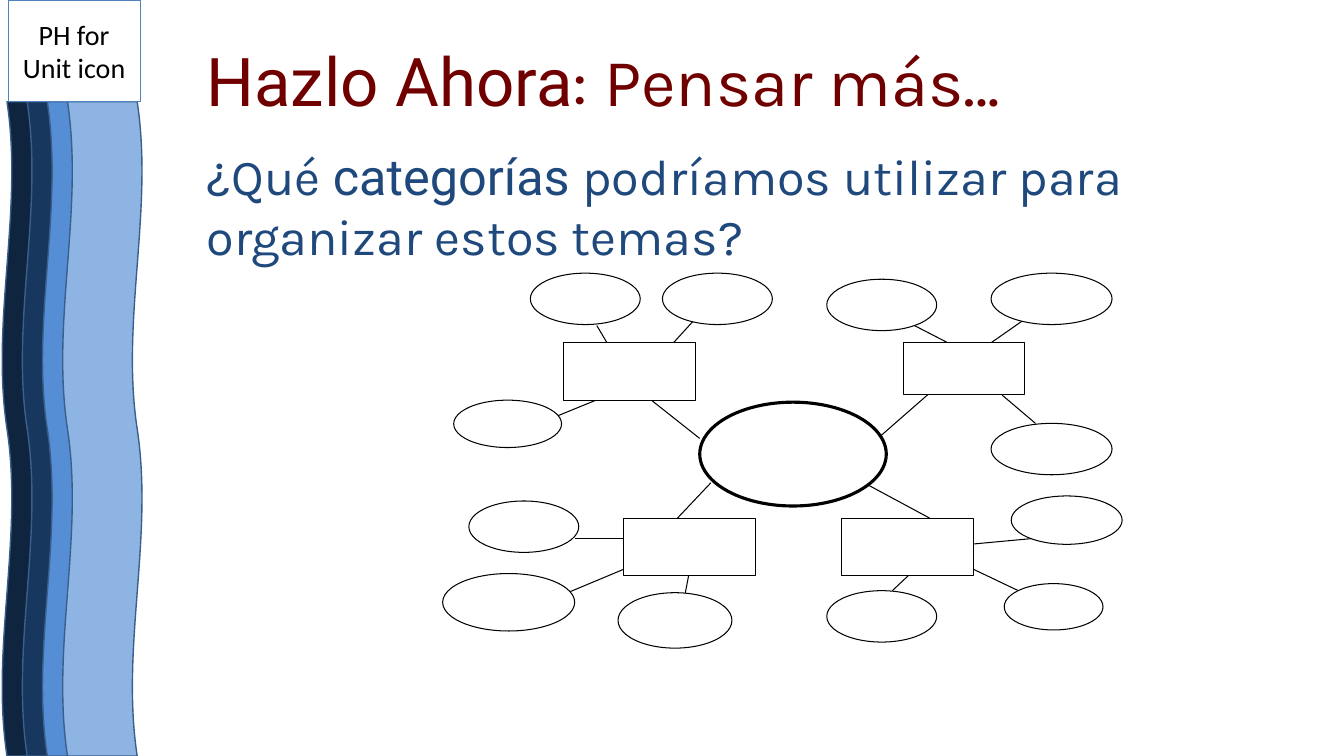
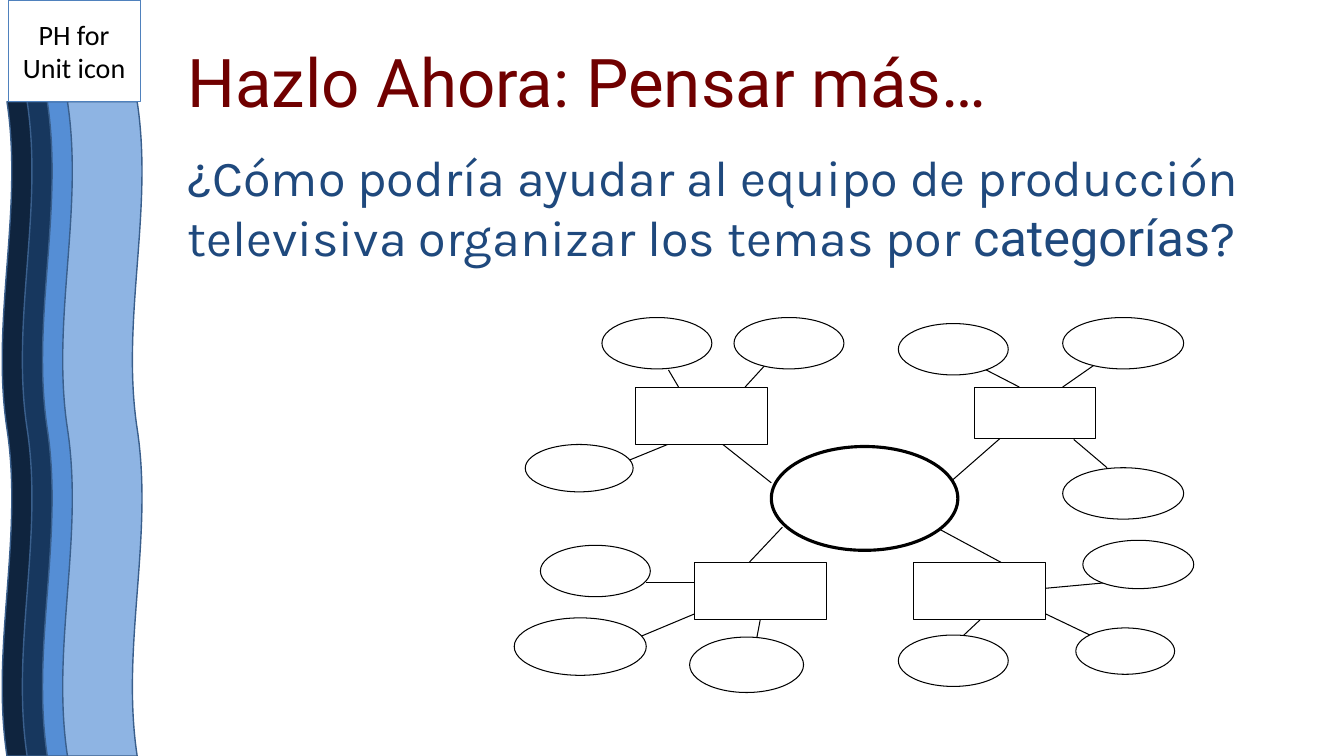
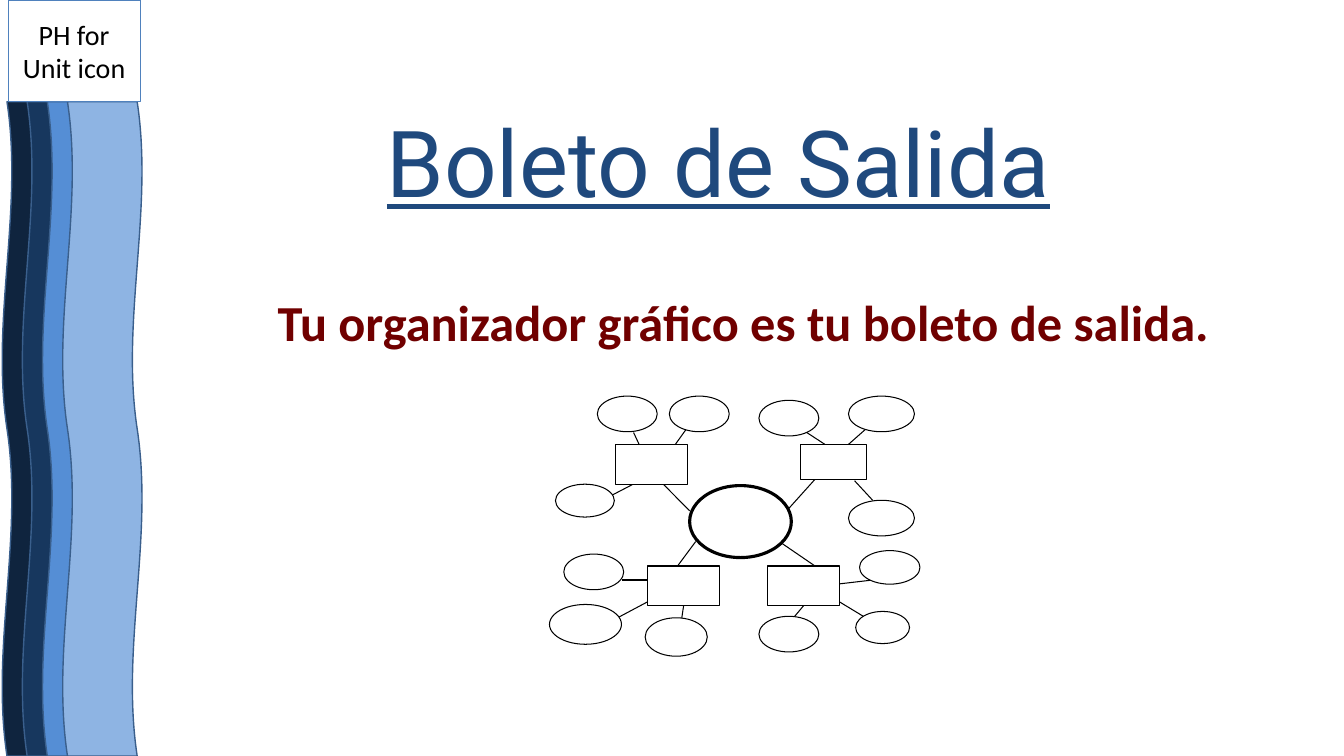
from pptx import Presentation
from pptx import util as u
from pptx.dml.color import RGBColor
from pptx.enum import shapes, text
from pptx.oxml.ns import qn
from lxml import etree

WIDE, HIGH = 13.33, 7.5
RED, NAVY, BLACK, WHITE = "700000", "1F497D", "000000", "FFFFFF"
KIND = shapes.MSO_SHAPE

# Side band, shared by all slides
WAVES = ["0F243E", "17375E", "558ED5", "8EB4E3"]
LABEL = "PH for Unit icon"

# Mind map on a field of 6.75 by 3.72: left, top, width, height
FIELD = (6.75, 3.72)
HUB = (2.55, 1.28, 1.85, 1.03)
BOXES = [(1.2, 0.69, 1.31, 0.57), (4.57, 0.69, 1.2, 0.51),
         (1.79, 2.43, 1.31, 0.57), (3.96, 2.43, 1.31, 0.57)]
BUBBLES = [(0.87, 0, 1.09, 0.51), (2.18, 0, 1.09, 0.51), (0.11, 1.26, 1.07, 0.47),
           (3.81, 0.06, 1.09, 0.51), (5.44, 0, 1.2, 0.51), (5.44, 1.49, 1.2, 0.51),
           (0.26, 2.26, 1.09, 0.51), (0, 2.98, 1.31, 0.57), (1.74, 3.17, 1.13, 0.55),
           (3.81, 3.15, 1.09, 0.51), (5.64, 2.21, 1.1, 0.48), (5.57, 3.08, 0.98, 0.46)]
# Links: x, y of both ends on the same field
LINKS = [(2.29, 0.69, 2.5, 0.46), (5.01, 0.69, 4.68, 0.52), (5.44, 0.69, 5.77, 0.46),
         (1.57, 1.24, 1.13, 1.42), (1.85, 2.63, 1.31, 2.63), (1.79, 2.94, 1.24, 3.17),
         (2.4, 3.21, 2.44, 3), (4.18, 2.08, 4.83, 2.43), (5.88, 2.63, 5.23, 2.69),
         (5.27, 2.94, 5.71, 3.15), (4.62, 3, 4.46, 3.15), (2.66, 2.08, 2.33, 2.43),
         (4.35, 1.61, 4.83, 1.19), (2.55, 1.64, 2.07, 1.26), (1.63, 0.69, 1.53, 0.52),
         (5.55, 1.21, 5.88, 1.49)]

# Per slide: text box, paragraphs with runs (text, font, size, colour), map place
SLIDES = [
    dict(box=(1.95, 0.34, 10.03, 2.37), map=(4.39, 2.71, 6.75, 3.72), paras=[
        dict(runs=[("Hazlo Ahora", "Roboto", 48, RED), (": Pensar más…", "Karla", 48, RED)]),
        dict(before=18, runs=[
            ("¿Qué ", "Karla", 36, NAVY), ("categorías ", "Roboto", 36, NAVY),
            ("podríamos utilizar para organizar estos temas?", "Karla", 36, NAVY)])]),
    dict(box=(1.76, 0.35, 11.02, 2.37), map=(5.1, 3.15, 6.75, 3.72), paras=[
        dict(runs=[("Hazlo Ahora: Pensar más…", "Roboto", 48, RED)]),
        dict(before=18, runs=[
            ("¿Cómo podría ayudar al equipo de producción televisiva "
             "organizar los temas por ", "Karla", 36, NAVY),
            ("categorías", "Roboto", 36, NAVY), ("?", "Karla", 36, NAVY)])]),
    dict(box=(1.47, 0.99, 11.31, 2.57), map=(5.45, 3.93, 3.68, 2.58), paras=[
        dict(mid=True, after=54, under=True,
             runs=[("Boleto de Salida", "Roboto", 66, NAVY)]),
        dict(mid=True, after=12, bold=True, left=0.5,
             runs=[("Tu organizador gráfico es tu boleto de salida.", "Calibri", 36, RED)])]),
]


def rgb(code):
    return RGBColor.from_string(code)


def inch(nums):
    return [u.Inches(n) for n in nums]


def stroke(item, color, width):
    item.line.color.rgb = rgb(color)
    item.line.width = u.Pt(width)


def shape(home, kind, place, fill, color, width):
    item = home.add_shape(kind, *inch(place))
    item.shadow.inherit = False
    if fill:
        item.fill.solid()
        item.fill.fore_color.rgb = rgb(fill)
    else:
        item.fill.background()
    stroke(item, color, width)
    return item


def link(home, ends):
    item = home.add_connector(shapes.MSO_CONNECTOR.STRAIGHT, *inch(ends))
    stroke(item, BLACK, 0.75)
    etree.SubElement(item._element.spPr, qn("a:effectLst"))


def write(frame, paras):
    frame.word_wrap = True
    for i, data in enumerate(paras):
        para = frame.paragraphs[0] if i == 0 else frame.add_paragraph()
        para.alignment = text.PP_ALIGN.CENTER if data.get("mid") else text.PP_ALIGN.LEFT
        para.space_before = u.Pt(data.get("before", 0))
        para.space_after = u.Pt(data.get("after", 0))
        if "left" in data:
            para._p.get_or_add_pPr().set("marL", str(u.Inches(data["left"])))
        for words, face, size, color in data["runs"]:
            run = para.add_run()
            run.text = words
            font = run.font
            font.name, font.size, font.color.rgb = face, u.Pt(size), rgb(color)
            font.bold = data.get("bold", False)
            font.underline = data.get("under", False)


def side(slide):
    # Four waves stand on end, each a step to the right
    for i, fill in enumerate(WAVES):
        wave = shape(slide.shapes, KIND.DOUBLE_WAVE, (-2.83 + 0.2 * i, 3.86, 6.49, 0.79),
                     fill, "3A5F8C", 1)
        wave.rotation = 270
    label = shape(slide.shapes, KIND.RECTANGLE, (0.08, 0, 1.31, 1.01), None, "4F81BD", 0.75)
    label.text_frame.vertical_anchor = text.MSO_ANCHOR.MIDDLE
    write(label.text_frame, [dict(mid=True, runs=[(LABEL, "Calibri", 20, BLACK)])])


def mindmap(slide, left, top, wide, high):
    home = slide.shapes.add_group_shape().shapes
    sx, sy = wide / FIELD[0], high / FIELD[1]

    def point(x, y):
        return left + x * sx, top + y * sy

    for x1, y1, x2, y2 in LINKS:
        link(home, point(x1, y1) + point(x2, y2))
    for kind, places, width in ((KIND.OVAL, [HUB], 2.25), (KIND.RECTANGLE, BOXES, 0.75),
                                (KIND.OVAL, BUBBLES, 0.75)):
        for x, y, w, h in places:
            shape(home, kind, point(x, y) + (w * sx, h * sy), WHITE, BLACK, width)


def main():
    deck = Presentation()
    deck.slide_width, deck.slide_height = inch((WIDE, HIGH))
    for data in SLIDES:
        slide = deck.slides.add_slide(deck.slide_layouts[6])
        side(slide)
        write(slide.shapes.add_textbox(*inch(data["box"])).text_frame, data["paras"])
        mindmap(slide, *data["map"])
    deck.save("out.pptx")


if __name__ == "__main__":
    main()
